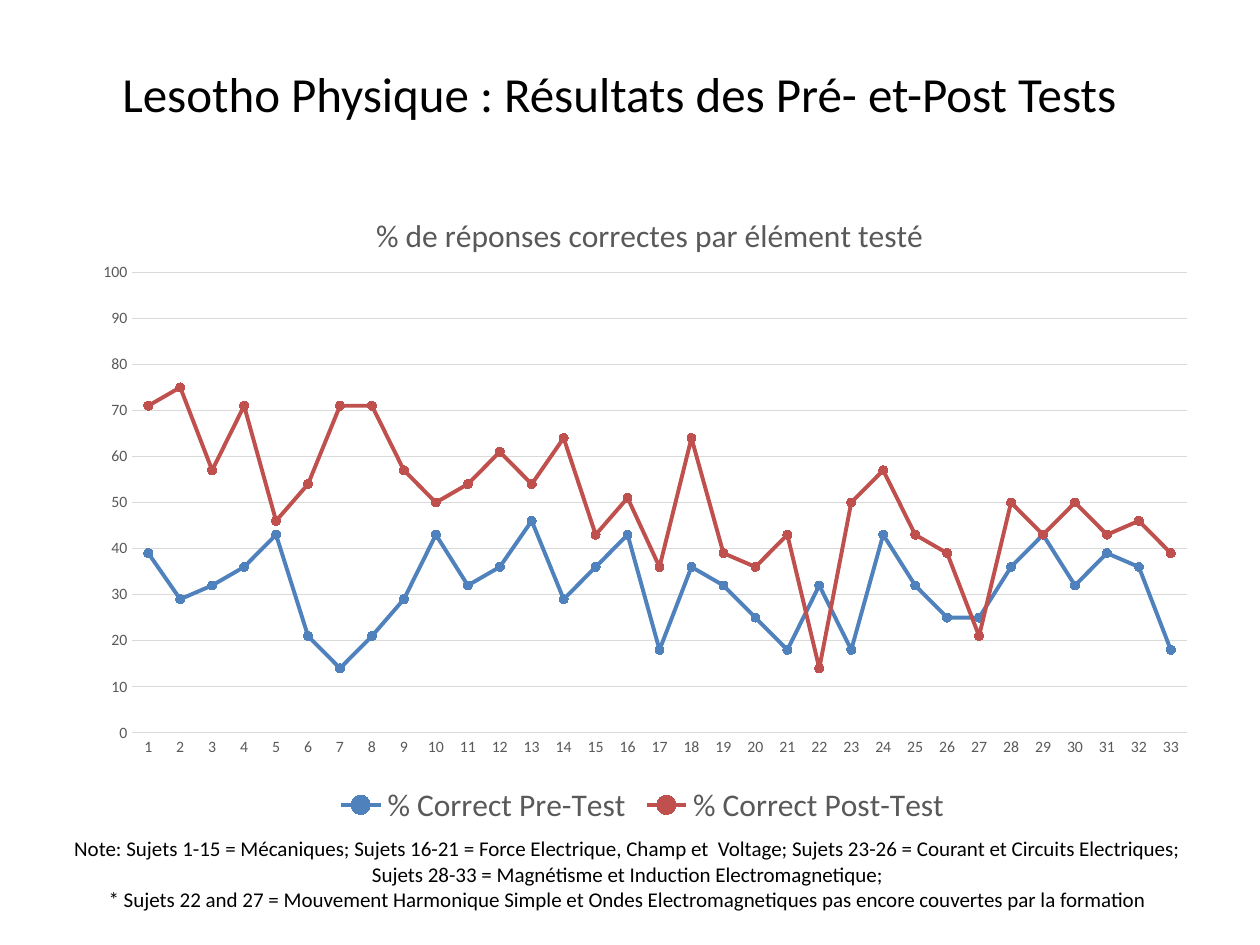
from dataclasses import dataclass

from lxml.etree import SubElement
from pptx import Presentation
from pptx.chart.data import CategoryChartData
from pptx.dml.color import RGBColor
from pptx.enum.chart import XL_CHART_TYPE as ChartType
from pptx.enum.chart import XL_LEGEND_POSITION as LegendPosition
from pptx.enum.chart import XL_MARKER_STYLE as MarkerStyle
from pptx.enum.chart import XL_TICK_MARK as TickMark
from pptx.enum.text import MSO_ANCHOR as Anchor
from pptx.enum.text import PP_ALIGN as Align
from pptx.oxml.ns import qn
from pptx.util import Inches, Pt


@dataclass(frozen=True)
class Theme:
    font: str = "Calibri"
    ink: str = "000000"
    muted: str = "595959"
    grid: str = "D9D9D9"
    series: tuple = ("4F81BD", "C0504D")
    title_size: int = 28
    chart_size: int = 18
    note_size: int = 12
    axis_size: int = 9
    grid_width: float = 0.75
    series_width: float = 2.25
    marker_size: int = 5


THEME = Theme()

TITLE = "Lesotho Physique : Résultats des Pré- et-Post Tests"
CHART_TITLE = "% de réponses correctes par élément testé"
NOTES = (
    "Note: Sujets 1-15 = Mécaniques; Sujets 16-21 = Force Electrique, Champ et  Voltage; "
    "Sujets 23-26 = Courant et Circuits Electriques; ",
    "Sujets 28-33 = Magnétisme et Induction Electromagnetique; ",
    "* Sujets 22 and 27 = Mouvement Harmonique Simple et Ondes Electromagnetiques "
    "pas encore couvertes par la formation ",
)
SCORES = {
    "% Correct Pre-Test": (
        39, 29, 32, 36, 43, 21, 14, 21, 29, 43, 32, 36, 46, 29, 36, 43, 18,
        36, 32, 25, 18, 32, 18, 43, 32, 25, 25, 36, 43, 32, 39, 36, 18,
    ),
    "% Correct Post-Test": (
        71, 75, 57, 71, 46, 54, 71, 71, 57, 50, 54, 61, 54, 64, 43, 51, 36,
        64, 39, 36, 43, 14, 50, 57, 43, 39, 21, 50, 43, 50, 43, 46, 39,
    ),
}


def style_font(font, size, color):
    font.name = THEME.font
    font.size = Pt(size)
    font.bold = False
    font.color.rgb = RGBColor.from_string(color)


def style_line(line, color, width):
    line.color.rgb = RGBColor.from_string(color)
    line.width = Pt(width)


def add_text(page, box, lines, size):
    frame = page.shapes.add_textbox(*map(Inches, box)).text_frame
    frame.word_wrap = True
    frame.vertical_anchor = Anchor.MIDDLE
    frame.text = "\n".join(lines)
    for para in frame.paragraphs:
        para.alignment = Align.CENTER
        style_font(para.font, size, THEME.ink)


def set_layout(parent, index, settings):
    for old in parent.findall(qn("c:layout")):
        parent.remove(old)
    layout = SubElement(parent, qn("c:layout"))
    manual = SubElement(layout, qn("c:manualLayout"))
    for name, value in settings.items():
        SubElement(manual, qn(f"c:{name}")).set("val", str(value))
    parent.insert(index, layout)


def style_axis(axis):
    axis.major_tick_mark = TickMark.NONE
    axis.minor_tick_mark = TickMark.NONE
    style_font(axis.tick_labels.font, THEME.axis_size, THEME.muted)


def style_series(series, color):
    series.smooth = False
    style_line(series.format.line, color, THEME.series_width)
    marker = series.marker
    marker.style = MarkerStyle.CIRCLE
    marker.size = THEME.marker_size
    marker.format.fill.solid()
    marker.format.fill.fore_color.rgb = RGBColor.from_string(color)
    style_line(marker.format.line, color, THEME.grid_width)


def add_score_chart(page, box):
    data = CategoryChartData(number_format="0")
    count = len(next(iter(SCORES.values())))
    data.categories = [str(item) for item in range(1, count + 1)]
    for name, values in SCORES.items():
        data.add_series(name, values)
    chart = page.shapes.add_chart(ChartType.LINE_MARKERS, *map(Inches, box), data).chart
    style_font(chart.font, THEME.axis_size, THEME.muted)

    chart.has_title = True
    heading = chart.chart_title
    heading.include_in_layout = False
    heading.text_frame.text = CHART_TITLE
    style_font(heading.text_frame.paragraphs[0].font, THEME.chart_size, THEME.muted)
    set_layout(heading._element, 1, {"xMode": "edge", "yMode": "edge", "x": 0.26, "y": 0.04})

    chart.has_legend = True
    chart.legend.position = LegendPosition.BOTTOM
    chart.legend.include_in_layout = False
    style_font(chart.legend.font, THEME.chart_size, THEME.muted)

    style_axis(chart.category_axis)
    style_line(chart.category_axis.format.line, THEME.grid, THEME.grid_width)
    scale = chart.value_axis
    style_axis(scale)
    scale.minimum_scale, scale.maximum_scale, scale.major_unit = 0, 100, 10
    scale.format.line.fill.background()
    style_line(scale.major_gridlines.format.line, THEME.grid, THEME.grid_width)

    plot = chart.plots[0]
    plot.vary_by_categories = False
    for series, color in zip(plot.series, THEME.series):
        style_series(series, color)
    area = chart._chartSpace.find(f".//{qn('c:plotArea')}")
    set_layout(area, 0, {
        "layoutTarget": "inner", "xMode": "edge", "yMode": "edge",
        "x": 0.05, "y": 0.14, "w": 0.93, "h": 0.71,
    })


def main():
    deck = Presentation()
    deck.slide_width, deck.slide_height = Inches(10), Inches(7.5)
    page = deck.slides.add_slide(deck.slide_layouts[6])
    add_text(page, (0.25, 0.3, 9.33, 0.87), [TITLE], THEME.title_size)
    add_score_chart(page, (0.6, 1.44, 9, 5.15))
    add_text(page, (0.29, 6.58, 9.42, 0.71), NOTES, THEME.note_size)
    deck.save("out.pptx")


if __name__ == "__main__":
    main()
